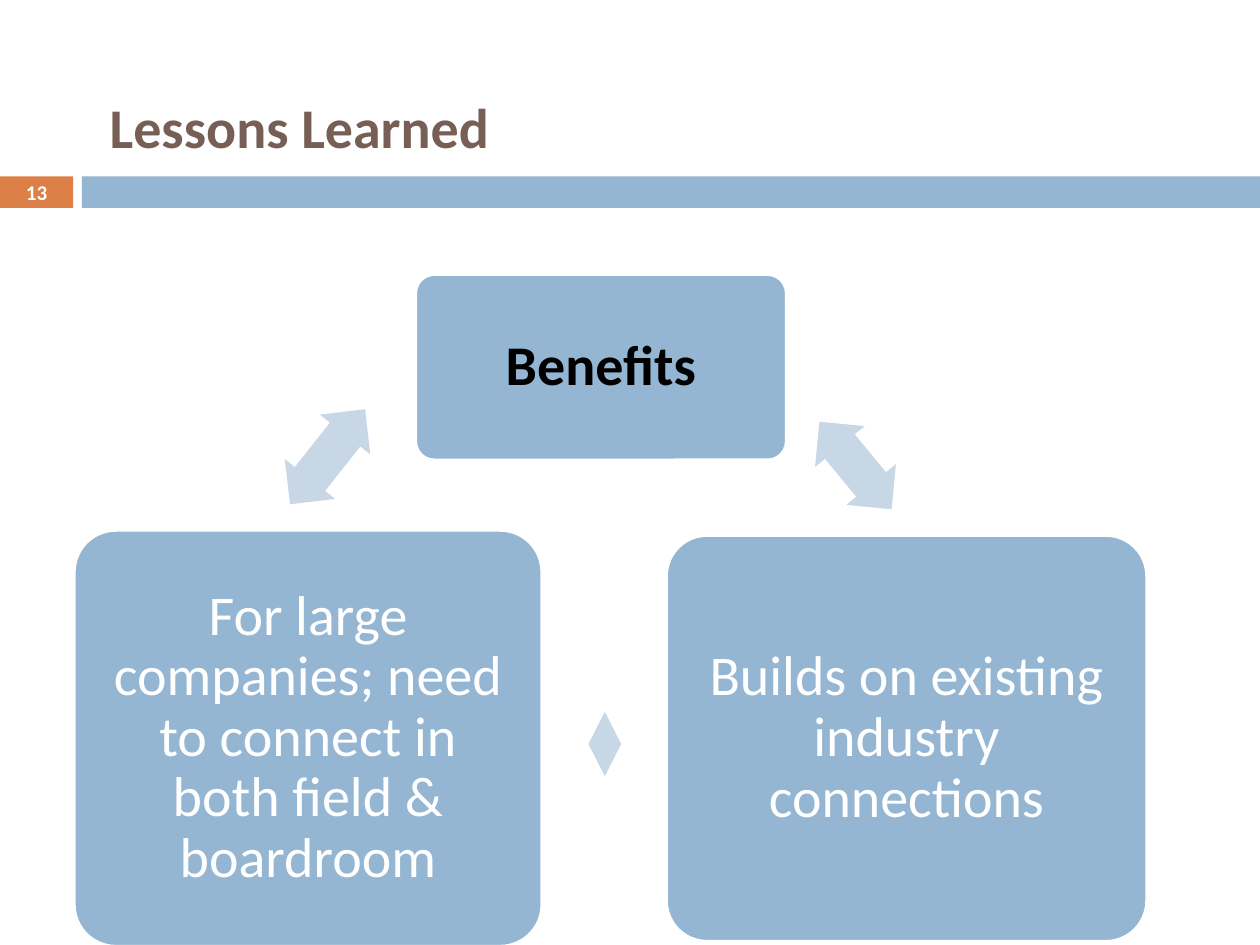
import pptx
import pptx.util
import pptx.dml.color
import pptx.enum.shapes
import pptx.enum.text

Inches = pptx.util.Inches
SHAPES = pptx.enum.shapes.MSO_SHAPE
ALIGN = pptx.enum.text.PP_ALIGN

THEME = {
    "font": "Calibri",
    "blue": "94B6D2",
    "pale": "C8D7E5",
    "orange": "DD8047",
    "brown": "775F55",
    "white": "FFFFFF",
    "black": "000000",
    "body_size": 32,
    "number_size": 12,
}


def add_block(kind, box, fill, outline=None):
    block = slide.shapes.add_shape(kind, *[Inches(length) for length in box])
    block.shadow.inherit = False
    block.fill.solid()
    block.fill.fore_color.rgb = pptx.dml.color.RGBColor.from_string(THEME[fill])
    if outline:
        block.line.color.rgb = pptx.dml.color.RGBColor.from_string(THEME[outline])
        block.line.width = pptx.util.Pt(1.5)
    else:
        block.line.fill.background()
    return block


def write_text(block, text, color, size, bold, align, margins, spacing=1.0):
    frame = block.text_frame
    frame.text = text
    left, top, right, bottom = [Inches(margin) for margin in margins]
    frame_format = {
        "word_wrap": True,
        "auto_size": pptx.enum.text.MSO_AUTO_SIZE.NONE,
        "vertical_anchor": pptx.enum.text.MSO_ANCHOR.MIDDLE,
        "margin_left": left,
        "margin_top": top,
        "margin_right": right,
        "margin_bottom": bottom,
    }
    for attribute, value in frame_format.items():
        setattr(frame, attribute, value)
    paragraph = frame.paragraphs[0]
    paragraph.alignment = align
    paragraph.line_spacing = spacing
    font_format = {"name": THEME["font"], "size": pptx.util.Pt(THEME[size]), "bold": bold}
    font = paragraph.runs[0].font
    for attribute, value in font_format.items():
        setattr(font, attribute, value)
    font.color.rgb = pptx.dml.color.RGBColor.from_string(THEME[color])


deck = pptx.Presentation()
deck.slide_width, deck.slide_height = Inches(10), Inches(7.5)
slide = deck.slides.add_slide(deck.slide_layouts[5])

# Header band with the slide number
page_number = add_block(SHAPES.RECTANGLE, (0, 1.4, 0.58, 0.25), "orange")
write_text(page_number, "13", "white", "number_size", True, ALIGN.CENTER, (0, 0, 0, 0))
add_block(SHAPES.RECTANGLE, (0.65, 1.4, 9.35, 0.25), "blue")

# Title
title = slide.shapes.title
title_place = {"left": 0.67, "top": 0.46, "width": 8.92, "height": 1.08}
for attribute, value in title_place.items():
    setattr(title, attribute, Inches(value))
write_text(title, "Lessons Learned", "brown", "body_size", True, ALIGN.LEFT,
           (0.2, 0.05, 0.1, 0.05))

# Cycle cards
cards = [
    ("Benefits", (3.3, 2.18, 2.94, 1.47), "black", True),
    ("Builds on existing industry connections", (5.29, 4.25, 3.81, 3.22), "white", False),
    ("For large companies; need to connect in both field & boardroom",
     (0.59, 4.21, 3.71, 3.3), "white", False),
]
for text, box, color, bold in cards:
    card = add_block(SHAPES.ROUNDED_RECTANGLE, box, "blue", "white")
    card.adjustments[0] = 0.1
    write_text(card, text, color, "body_size", bold, ALIGN.CENTER, (0.13,) * 4, 0.9)

# Double arrows between the cards
arrows = [
    ((6.34, 3.44, 0.9, 0.51), 50.5),
    ((4.67, 5.65, 0.26, 0.51), 180),
    ((2.12, 3.37, 0.96, 0.51), 308.3),
]
for box, angle in arrows:
    arrow = add_block(SHAPES.LEFT_RIGHT_ARROW, box, "pale")
    arrow.adjustments[0] = 0.6
    arrow.adjustments[1] = 0.5
    arrow.rotation = angle

deck.save("out.pptx")
